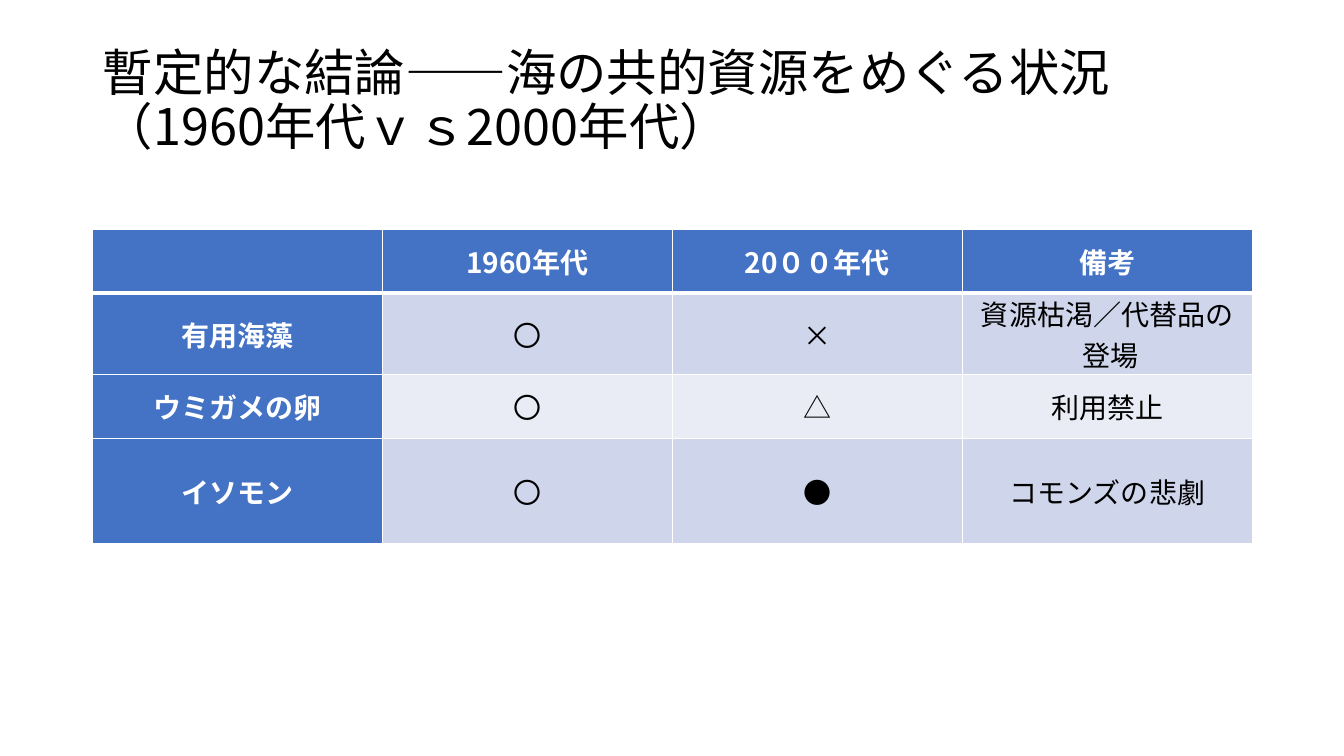
import pptx
import pptx.util
import pptx.dml.color
import pptx.enum.text
import pptx.oxml.ns
from lxml import etree

Inches, Pt = pptx.util.Inches, pptx.util.Pt
qn = pptx.oxml.ns.qn

# Content
TITLE = "暫定的な結論――海の共的資源をめぐる状況\v（1960年代ｖｓ2000年代）"
ROWS = [
    ("", "1960年代", "20００年代", "備考"),
    ("有用海藻", "〇", "×", "資源枯渇／代替品の登場"),
    ("ウミガメの卵", "〇", "△", "利用禁止"),
    ("イソモン", "〇", "●", "コモンズの悲劇"),
]
ROW_HEIGHTS = (0.63, 0.63, 0.63, 1.05)
LEFT, TABLE_TOP, WIDTH = 0.92, 2.28, 11.5
FONT = "Noto Sans CJK JP"
COLORS = {"text": "000000", "white": "FFFFFF", "header": "4472C4",
          "odd": "CFD5EA", "even": "E9EBF5"}


def rgb(name):
    return pptx.dml.color.RGBColor.from_string(COLORS[name])


def format_runs(para, size, color, bold=False):
    for span in para.runs:
        span.font.size = Pt(size)
        span.font.bold = bold
        span.font.name = FONT
        span.font.color.rgb = rgb(color)
        east_asian = etree.SubElement(span.font._element, qn("a:ea"))
        east_asian.set("typeface", FONT)


def add_borders(cell, widths):
    properties = cell._tc.get_or_add_tcPr()
    for index, (side, width) in enumerate(widths.items()):
        line = etree.Element(qn("a:ln" + side), w=str(Pt(width)))
        fill = etree.SubElement(line, qn("a:solidFill"))
        etree.SubElement(fill, qn("a:srgbClr"), val=COLORS["white"])
        properties.insert(index, line)


deck = pptx.Presentation()
deck.slide_width, deck.slide_height = Inches(13.33), Inches(7.5)
page = deck.slides.add_slide(deck.slide_layouts[5])

# Title
title = page.shapes.title
title.left, title.top = Inches(LEFT), Inches(0.4)
title.width, title.height = Inches(WIDTH), Inches(1.23)
frame = title.text_frame
frame.word_wrap = True
frame.auto_size = pptx.enum.text.MSO_AUTO_SIZE.NONE
frame.vertical_anchor = pptx.enum.text.MSO_ANCHOR.MIDDLE
para = frame.paragraphs[0]
para.text = TITLE
para.alignment = pptx.enum.text.PP_ALIGN.LEFT
para.line_spacing = 0.9
format_runs(para, 36, "text")

# Comparison table
table = page.shapes.add_table(
    len(ROWS), len(ROWS[0]), Inches(LEFT), Inches(TABLE_TOP),
    Inches(WIDTH), Inches(sum(ROW_HEIGHTS))).table
table.first_col = True
for row, height in zip(table.rows, ROW_HEIGHTS):
    row.height = Inches(height)

for r, texts in enumerate(ROWS):
    for c, text in enumerate(texts):
        cell = table.cell(r, c)
        is_header = r == 0 or c == 0
        band = "odd" if r % 2 else "even"
        cell.fill.solid()
        cell.fill.fore_color.rgb = rgb("header" if is_header else band)
        cell.vertical_anchor = pptx.enum.text.MSO_ANCHOR.MIDDLE
        cell.margin_left = cell.margin_right = Inches(0.07)
        cell.margin_top = cell.margin_bottom = 0
        add_borders(cell, {"L": 1, "R": 1, "T": 3 if r == 1 else 1,
                           "B": 3 if r == 0 else 1})
        para = cell.text_frame.paragraphs[0]
        para.text = text
        para.alignment = pptx.enum.text.PP_ALIGN.CENTER
        indents = para._p.get_or_add_pPr()
        indents.set("marL", str(Inches(0.07)))
        indents.set("indent", str(-Inches(0.07)))
        format_runs(para, 20, "white" if is_header else "text", is_header)

deck.save("out.pptx")
